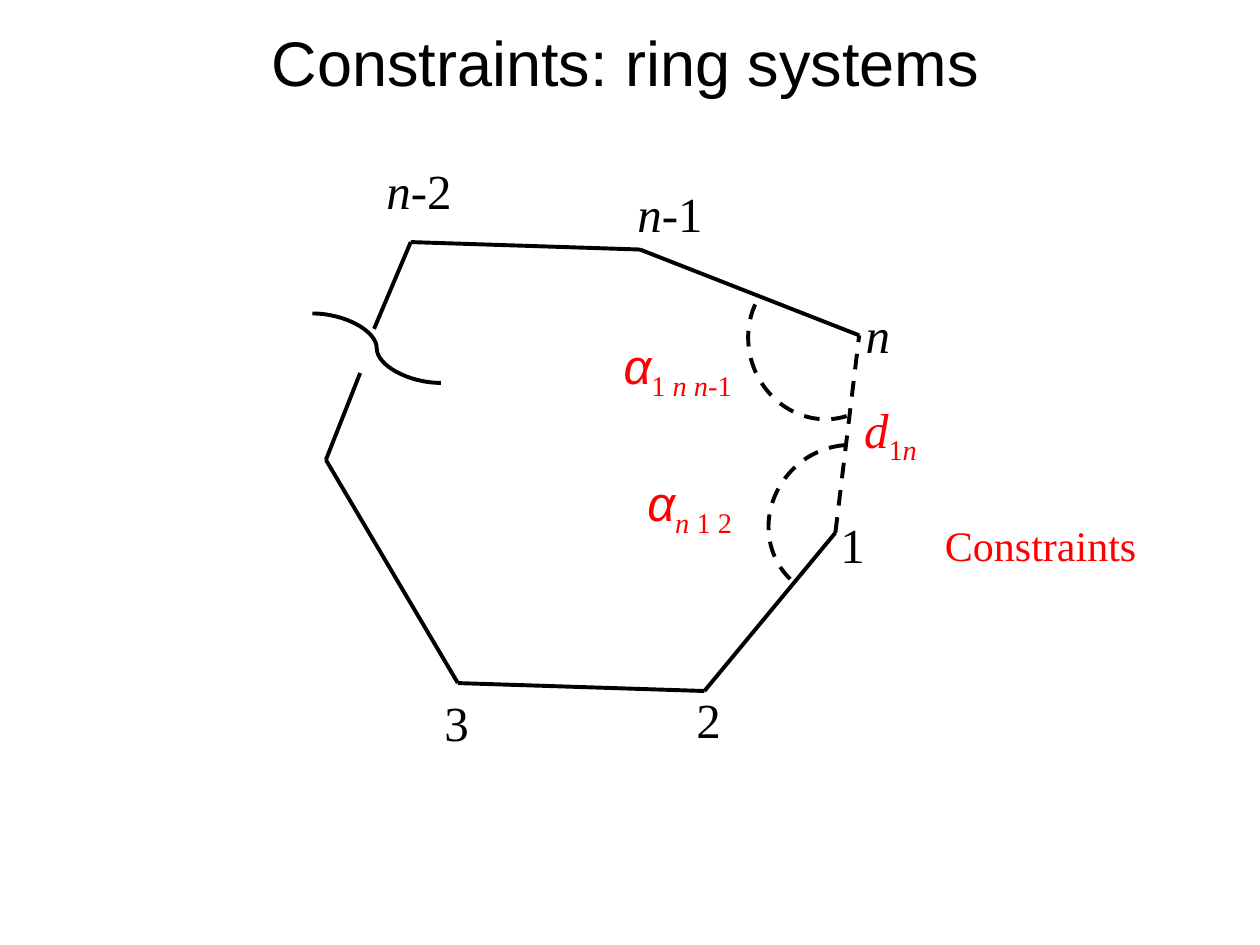
"""Build a slide that shows the closure constraints of a ring system."""
from dataclasses import dataclass

from lxml.etree import SubElement
from pptx import Presentation
from pptx.dml.color import RGBColor
from pptx.enum.dml import MSO_LINE
from pptx.enum.shapes import MSO_CONNECTOR, MSO_SHAPE
from pptx.enum.text import MSO_ANCHOR, MSO_AUTO_SIZE, PP_ALIGN
from pptx.oxml.ns import qn
from pptx.util import Cm, Pt


@dataclass(frozen=True)
class Theme:
    """Colours, fonts and sizes of the slide."""
    ink: RGBColor = RGBColor(0, 0, 0)
    accent: RGBColor = RGBColor(255, 0, 0)
    sans: str = "Arial"
    serif: str = "Times New Roman"
    title_size: int = 36
    label_size: int = 28
    note_size: int = 24
    line_width: float = 2.25


THEME = Theme()
TITLE = "Constraints: ring systems"
TITLE_FRAME = (0.71, 0.33, 23.8, 1.8)

ATOMS = {
    "n": (17.32, 6.76), "n-1": (12.9, 5.03), "n-2": (8.28, 4.88),
    "break above": (7.54, 6.63), "break below": (7.26, 7.52),
    "left": (6.57, 9.27), "3": (9.23, 13.77), "2": (14.2, 13.93),
    "1": (16.84, 10.74),
}
CHAINS = [
    ["n", "n-1", "n-2", "break above"],
    ["break below", "left", "3", "2", "1"],
]
CLOSURE = ("1", "n")
BREAK_CURVE = ((6.3, 6.32), (8.89, 7.72))

ARC_SIZE = (3, 3.2)
ARC_ANGLES = (162, 29.43)
ARCS = [((15.09, 5.26), 162.7), ((15.54, 8.92), 224)]

ITALIC = {"italic": True}
LOW = {"subscript": True}
LOW_ITALIC = {"subscript": True, "italic": True}
ALPHA = ("α", {"italic": True, "font": THEME.sans})

ATOM_LABELS = [
    ((16.69, 10.24), 1.02, [("1", {})]),
    ((13.79, 13.77), 1.02, [("2", {})]),
    ((8.71, 13.84), 1.02, [("3", {})]),
    ((17.2, 6.02), 1.02, [("n", ITALIC)]),
    ((12.6, 3.58), 1.85, [("n", ITALIC), ("-1", {})]),
    ((7.54, 3.12), 1.85, [("n", ITALIC), ("-2", {})]),
]
CONSTRAINT_LABELS = [
    ((17.17, 7.92), 1.68, [("d", ITALIC), ("1", LOW), ("n", LOW_ITALIC)]),
    ((12.32, 6.63), 3.12, [ALPHA, ("1 ", LOW), ("n n-", LOW_ITALIC), ("1", LOW)]),
    ((12.8, 9.4), 2.46, [ALPHA, ("n ", LOW_ITALIC), ("1 2", LOW)]),
    ((18.8, 10.34), 4.39, [("Constraints", {"size": THEME.note_size})]),
]


def add_span(para, text, font=THEME.serif, size=THEME.label_size,
             color=THEME.ink, italic=False, subscript=False):
    span = para.add_run()
    span.text = text
    span.font.name = font
    span.font.size = Pt(size)
    span.font.color.rgb = color
    span.font.italic = italic
    if subscript:
        span.font._element.set("baseline", "-25000")


def add_label(page, corner, width, spans, color):
    size = spans[0][1].get("size", THEME.label_size)
    height = 1.45 * size / THEME.label_size
    box = page.shapes.add_textbox(*map(Cm, (*corner, width, height)))
    frame = box.text_frame
    frame.word_wrap = False
    frame.auto_size = MSO_AUTO_SIZE.SHAPE_TO_FIT_TEXT
    for text, style in spans:
        add_span(frame.paragraphs[0], text, color=color, **style)


def style_line(line, dashed):
    line.color.rgb = THEME.ink
    line.width = Pt(THEME.line_width)
    if dashed:
        line.dash_style = MSO_LINE.DASH


def add_line(page, start, end, kind=MSO_CONNECTOR.STRAIGHT, dashed=False):
    connector = page.shapes.add_connector(kind, *map(Cm, (*start, *end)))
    style_line(connector.line, dashed)
    SubElement(connector._element.spPr, qn("a:effectLst"))


def add_angle_arc(page, corner, rotation):
    arc = page.shapes.add_shape(MSO_SHAPE.ARC, *map(Cm, (*corner, *ARC_SIZE)))
    arc.adjustments[0], arc.adjustments[1] = ARC_ANGLES
    arc.rotation = rotation
    arc.fill.background()
    arc.shadow.inherit = False
    style_line(arc.line, dashed=True)


def add_title(page):
    title = page.shapes.title
    title.left, title.top, title.width, title.height = map(Cm, TITLE_FRAME)
    frame = title.text_frame
    frame.auto_size = MSO_AUTO_SIZE.NONE
    frame.vertical_anchor = MSO_ANCHOR.MIDDLE
    para = frame.paragraphs[0]
    para.alignment = PP_ALIGN.CENTER
    add_span(para, TITLE, font=THEME.sans, size=THEME.title_size)


def main():
    deck = Presentation()
    deck.slide_width, deck.slide_height = Cm(25.4), Cm(19.05)
    page = deck.slides.add_slide(deck.slide_layouts[5])
    add_title(page)
    for chain in CHAINS:
        for start, end in zip(chain, chain[1:]):
            add_line(page, ATOMS[start], ATOMS[end])
    add_line(page, *(ATOMS[name] for name in CLOSURE), dashed=True)
    for corner, rotation in ARCS:
        add_angle_arc(page, corner, rotation)
    add_line(page, *BREAK_CURVE, kind=MSO_CONNECTOR.CURVE)
    for labels, color in ((ATOM_LABELS, THEME.ink), (CONSTRAINT_LABELS, THEME.accent)):
        for corner, width, spans in labels:
            add_label(page, corner, width, spans, color)
    deck.save("out.pptx")


if __name__ == "__main__":
    main()
